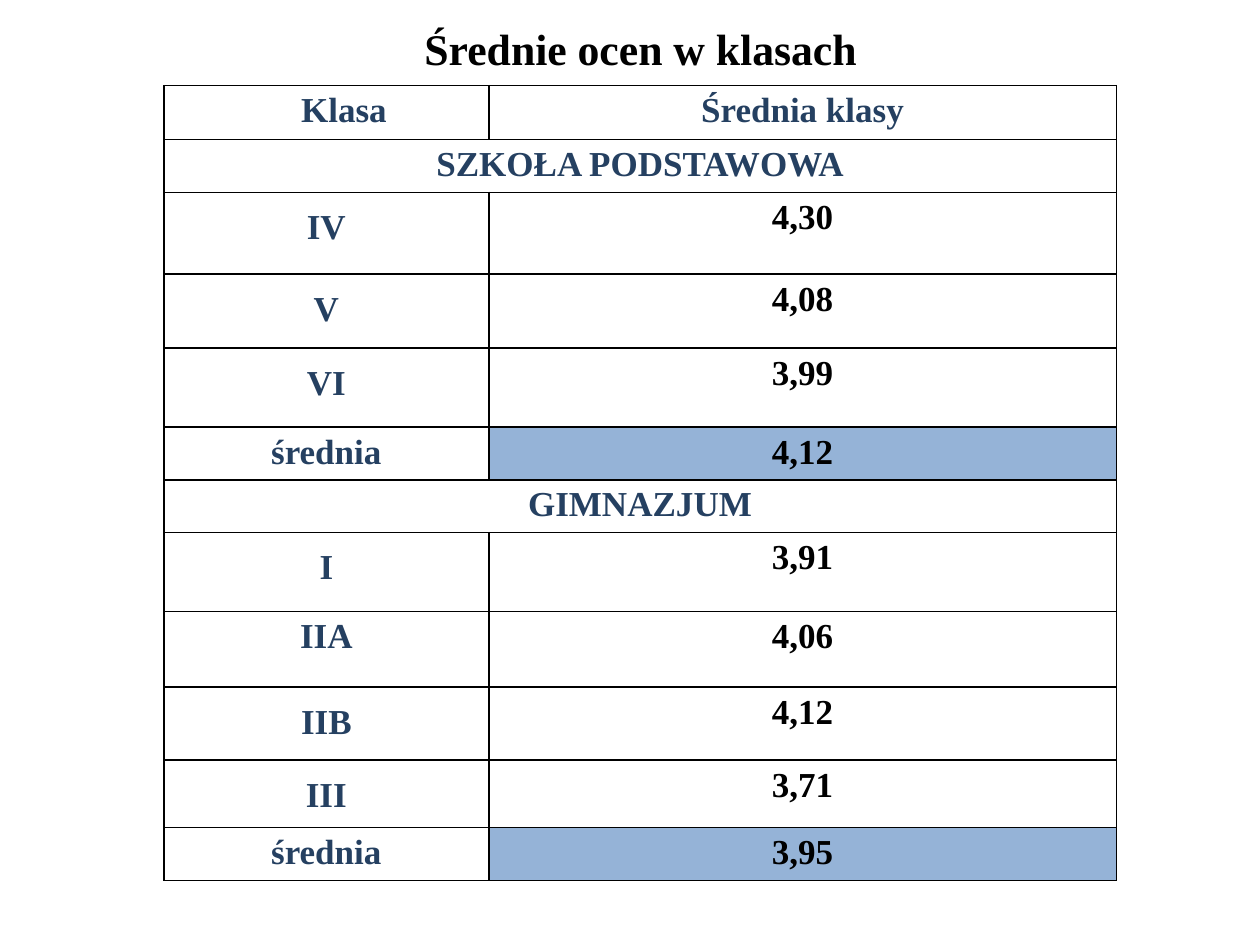
from lxml import etree
from pptx import Presentation
from pptx.dml.color import RGBColor
from pptx.enum.text import MSO_ANCHOR, PP_ALIGN
from pptx.oxml.ns import qn
from pptx.util import Inches, Pt

CENTER = PP_ALIGN.CENTER
MIDDLE = MSO_ANCHOR.MIDDLE
TOP = MSO_ANCHOR.TOP

FONT = "Times New Roman"
BLACK = "000000"
NAVY = "254061"
BLUE = "95B3D7"

COLUMNS = [2.58, 4.98]
ROWS = [
    ("Klasa", "Średnia klasy", 0.43),
    ("SZKOŁA PODSTAWOWA", None, 0.42),
    ("IV", "4,30", 0.65),
    ("V", "4,08", 0.59),
    ("VI", "3,99", 0.63),
    ("średnia", "4,12", 0.42),
    ("GIMNAZJUM", None, 0.42),
    ("I", "3,91", 0.63),
    ("IIA", "4,06", 0.6),
    ("IIB", "4,12", 0.58),
    ("III", "3,71", 0.54),
    ("średnia", "3,95", 0.42),
]
LOWERED = {"IV", "V", "VI", "I", "IIB", "III"}


def rgb(value):
    return RGBColor.from_string(value)


def write(tf, text, size=20, color=BLACK, spacing=None):
    tf.word_wrap = True
    p = tf.paragraphs[0]
    p.alignment = CENTER
    p.line_spacing = spacing
    r = p.add_run()
    r.text = text
    r.font.name = FONT
    r.font.size = Pt(size)
    r.font.bold = True
    r.font.color.rgb = rgb(color)


def add_borders(cell, color=BLACK, width=1):
    tc_pr = cell._tc.get_or_add_tcPr()
    for side in ("lnL", "lnR", "lnT", "lnB"):
        ln = etree.SubElement(tc_pr, qn(f"a:{side}"), w=str(Pt(width)))
        fill = etree.SubElement(ln, qn("a:solidFill"))
        etree.SubElement(fill, qn("a:srgbClr"), val=color)


def format_cell(cell, fill=None, left=0.05, top=0):
    cell.margin_left = Inches(left)
    cell.margin_right = Inches(0.05)
    cell.margin_top = Inches(top)
    cell.margin_bottom = 0
    cell.vertical_anchor = TOP
    add_borders(cell)
    if fill:
        cell.fill.solid()
        cell.fill.fore_color.rgb = rgb(fill)
    else:
        cell.fill.background()


def add_title(s, left, top, width, height):
    sp = s.shapes.add_textbox(Inches(left), Inches(top), Inches(width), Inches(height))
    tf = sp.text_frame
    tf.vertical_anchor = MIDDLE
    write(tf, "Średnie ocen w klasach", size=25)


def add_grades(s, left, top, width, height):
    frame = s.shapes.add_table(
        len(ROWS), len(COLUMNS), Inches(left), Inches(top), Inches(width), Inches(height)
    )
    table = frame.table
    table.first_row = False
    table.horz_banding = False
    for column, share in zip(table.columns, COLUMNS):
        column.width = Inches(width * share / sum(COLUMNS))
    total = sum(row[2] for row in ROWS)
    for i, (label, value, share) in enumerate(ROWS):
        table.rows[i].height = Inches(height * share / total)
        name, grade = table.cell(i, 0), table.cell(i, 1)
        format_cell(name, left=0.33 if i == 0 else 0.05, top=0.08 if label in LOWERED else 0)
        format_cell(grade, fill=BLUE if label == "średnia" else None)
        write(name.text_frame, label, color=NAVY, spacing=1.15)
        if value is None:
            name.merge(grade)
        else:
            write(grade.text_frame, value, color=NAVY if i == 0 else BLACK, spacing=1.15)


def main():
    prs = Presentation()
    prs.slide_width = Inches(10)
    prs.slide_height = Inches(7.5)
    s = prs.slides.add_slide(prs.slide_layouts[6])
    add_title(s, 2.8, 0, 4.57, 0.76)
    add_grades(s, 1.3, 0.68, 7.56, 6.31)
    prs.save("out.pptx")


if __name__ == "__main__":
    main()
